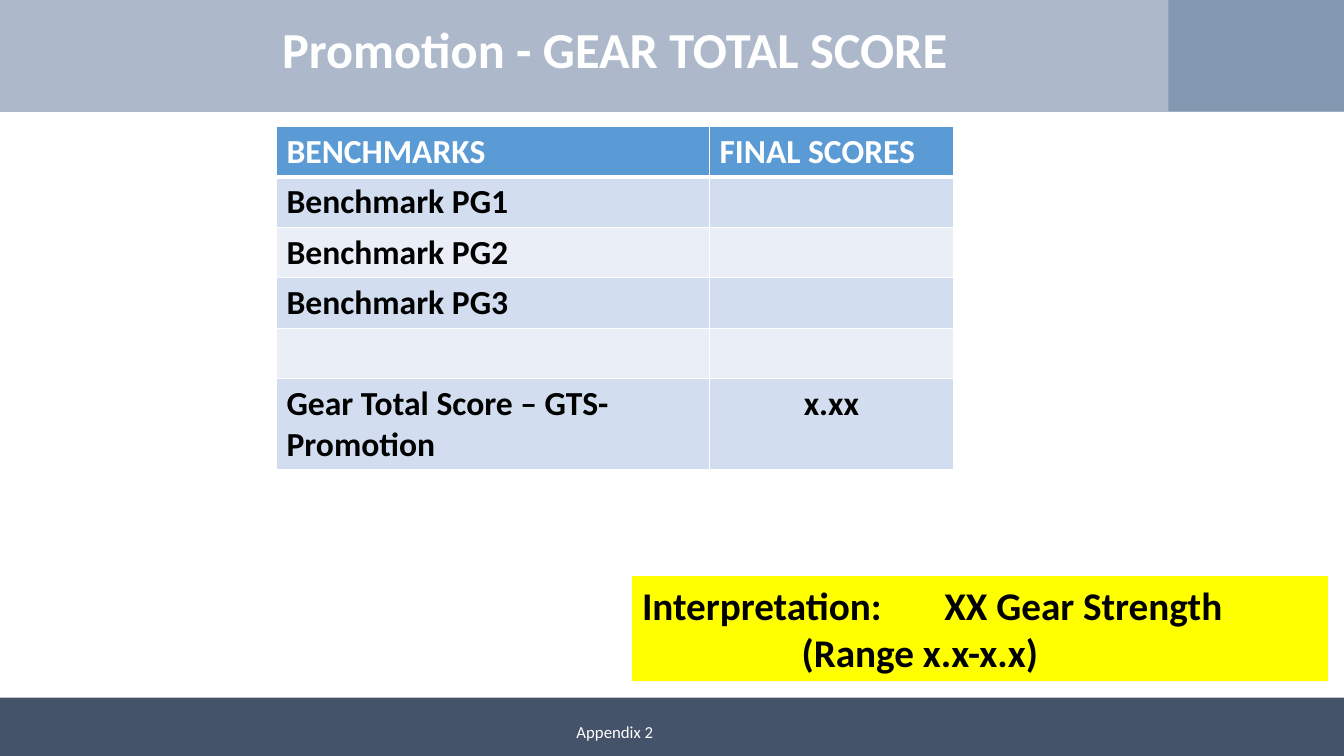
import pptx
import pptx.dml.color
import pptx.enum.shapes
import pptx.enum.text
import pptx.oxml
import pptx.oxml.ns
import pptx.util
from lxml import etree

Pt = pptx.util.Pt
ALIGN = pptx.enum.text.PP_ALIGN
MIDDLE = pptx.enum.text.MSO_ANCHOR.MIDDLE
SCORES = [
    ("BENCHMARKS", "FINAL SCORES"),
    ("Benchmark PG1", ""),
    ("Benchmark PG2", ""),
    ("Benchmark PG3", ""),
    ("", ""),
    ("Gear Total Score – GTS- Promotion", "x.xx"),
]


def color(value):
    return pptx.dml.color.RGBColor.from_string(value)


def fill_with(target, value):
    target.fill.solid()
    target.fill.fore_color.rgb = color(value)


def add_block(slide, left, top, width, height, value):
    block = slide.shapes.add_shape(
        pptx.enum.shapes.MSO_SHAPE.RECTANGLE, Pt(left), Pt(top), Pt(width), Pt(height))
    block.shadow.inherit = False
    fill_with(block, value)
    block.line.fill.background()
    return block


def add_run(paragraph, text, size, value, bold=True):
    run = paragraph.add_run()
    run.text = text
    run.font.name = "Calibri"
    run.font.size = Pt(size)
    run.font.bold = bold
    run.font.color.rgb = color(value)


def add_label(slide, left, top, width, height, text, size, bold):
    frame = slide.shapes.add_textbox(Pt(left), Pt(top), Pt(width), Pt(height)).text_frame
    frame.word_wrap = True
    frame.vertical_anchor = MIDDLE
    paragraph = frame.paragraphs[0]
    paragraph.alignment = ALIGN.CENTER
    add_run(paragraph, text, size, "FFFFFF", bold)


def add_border(cell, side, width):
    properties = cell._tc.get_or_add_tcPr()
    line = etree.SubElement(properties, pptx.oxml.ns.qn(f"a:ln{side}"), w=str(Pt(width)))
    solid = etree.SubElement(line, pptx.oxml.ns.qn("a:solidFill"))
    etree.SubElement(solid, pptx.oxml.ns.qn("a:srgbClr"), val="FFFFFF")


def add_score_table(slide):
    table = slide.shapes.add_table(
        len(SCORES), 2, Pt(197.5), Pt(90.3), Pt(483.5), Pt(244.4)).table
    for column, width in zip(table.columns, (309.3, 174.2)):
        column.width = Pt(width)
    for row_index, texts in enumerate(SCORES):
        header = row_index == 0
        table.rows[row_index].height = Pt(64.4 if row_index == len(SCORES) - 1 else 36)
        band = "5B9BD5" if header else ("EAEFF7", "D2DEEF")[row_index % 2]
        for column_index, text in enumerate(texts):
            cell = table.cell(row_index, column_index)
            for side in "LRTB":
                thick = (row_index, side) in ((0, "B"), (1, "T"))
                add_border(cell, side, 3 if thick else 1)
            fill_with(cell, band)
            paragraph = cell.text_frame.paragraphs[0]
            if text:
                add_run(paragraph, text, 24, "FFFFFF" if header else "000000")
            if text == "x.xx":
                paragraph.alignment = ALIGN.CENTER


def add_interpretation(slide):
    frame = add_block(slide, 451.5, 411.5, 497, 75, "FFFF00").text_frame
    frame.word_wrap = True
    frame.vertical_anchor = pptx.enum.text.MSO_ANCHOR.TOP
    strength = frame.paragraphs[0]
    score_range = frame.add_paragraph()
    for paragraph in (strength, score_range):
        paragraph.alignment = ALIGN.LEFT
    tabs = etree.SubElement(strength._p.get_or_add_pPr(), pptx.oxml.ns.qn("a:tabLst"))
    etree.SubElement(tabs, pptx.oxml.ns.qn("a:tab"), pos=str(Pt(216)), algn="l")
    score_range._p.get_or_add_pPr().set("marL", str(Pt(114)))
    add_run(strength, "Interpretation:\tXX Gear Strength", 28, "000000")
    add_run(score_range, "(Range x.x-x.x)", 28, "000000")


def main():
    presentation = pptx.Presentation()
    presentation.slide_width = Pt(960)
    presentation.slide_height = Pt(540)
    slide = presentation.slides.add_slide(presentation.slide_layouts[6])
    add_block(slide, 0, 0, 960, 80, "ADB9CA")
    add_block(slide, 0, 498.3, 960, 41.7, "445369")
    add_block(slide, 834.5, 0, 125.5, 79.5, "8497B0")
    add_label(slide, 121.7, 508.3, 635, 28.8, "Appendix 2", 12, False)
    add_interpretation(slide)
    add_score_table(slide)
    add_label(slide, 0, -8.6, 878.4, 86.4, "Promotion - GEAR TOTAL SCORE", 36, True)
    presentation.save("out.pptx")


if __name__ == "__main__":
    main()
